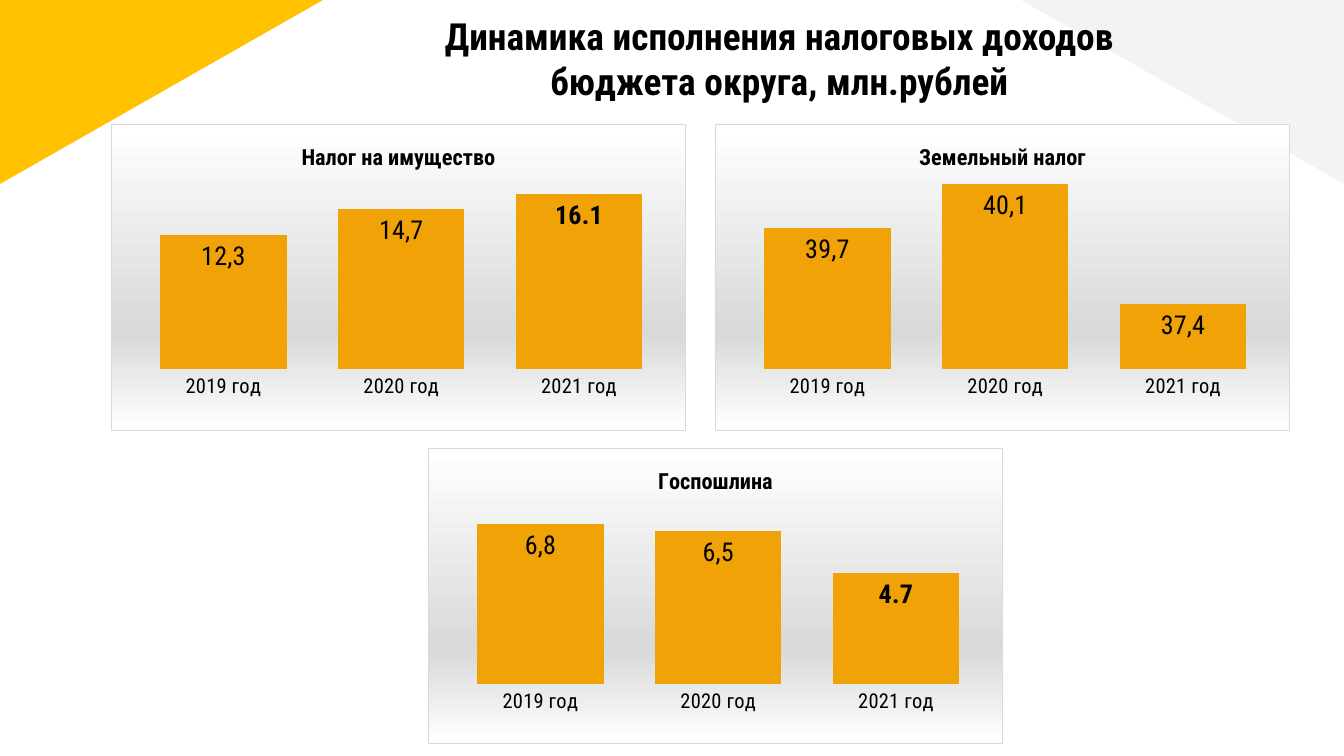
from pptx import Presentation
from pptx.chart.data import CategoryChartData as ChartData
from pptx.dml.color import RGBColor as Rgb
from pptx.enum.chart import XL_CHART_TYPE as Kind, XL_LABEL_POSITION as Spot
from pptx.enum.chart import XL_TICK_MARK as Tick
from pptx.enum.shapes import MSO_SHAPE as Form
from pptx.enum.text import MSO_ANCHOR as Anchor, MSO_AUTO_SIZE as Fit, PP_ALIGN as Align
from pptx.oxml import parse_xml
from pptx.oxml.ns import nsdecls, qn
from pptx.util import Pt

HEAD = "Динамика исполнения налоговых доходов\vбюджета округа, млн.рублей"
YEARS = ["2019 год", "2020 год", "2021 год"]
CHARTS = [
    {"name": "Налог на имущество", "vals": [12.3, 14.7, 16.1], "tags": ["12,3", "14,7"],
     "range": (0, 18), "box": (111, 124, 575, 307)},
    {"name": "Земельный налог", "vals": [39.7, 40.1, 39], "tags": ["39,7", "40,1", "37,4"],
     "range": (38.4, 40.2), "box": (715, 124, 575, 307)},
    {"name": "Госпошлина", "vals": [6.8, 6.5, 4.7], "tags": ["6,8", "6,5"],
     "range": (0, 8), "box": (428, 448, 575, 296)},
]
CORNERS = [("gold", 0, True), ("pale", 1021, False)]
PLOT = {"x": 0.04, "y": 0.16, "w": 0.93, "h": 0.64}
THEME = {
    "font": "Roboto Condensed", "ink": "000000", "bar": "F0A206",
    "gold": "FFC100", "pale": "F3F3F3", "edge": "D9D9D9",
    "fade": [(0, "FFFFFF"), (68, "D9D9D9"), (100, "FFFFFF")],
    "head": 20, "label": 14, "title": 12, "axis": 11,
}
SCALE = 914400 / 134.4


def px(*nums):
    return [round(n * SCALE) for n in nums]


def style(font, size, bold=False):
    font.name = THEME["font"]
    font.size = Pt(size)
    font.bold = bold
    font.color.rgb = Rgb.from_string(THEME["ink"])


def put(frame, text, size, bold=False, align=Align.CENTER):
    frame.text = text
    para = frame.paragraphs[0]
    para.alignment = align
    for run in para.runs:
        style(run.font, size, bold)


def corner(slide, tone, left, flip):
    shape = slide.shapes.add_shape(Form.RIGHT_TRIANGLE, *px(left, 0, 323, 184))
    shape.rotation = 180
    shape.shadow.inherit = False
    shape.fill.solid()
    shape.fill.fore_color.rgb = Rgb.from_string(THEME[tone])
    shape.line.fill.background()
    if flip:
        shape._element.spPr.xfrm.set("flipH", "1")


def panel(chart):
    stops = "".join(
        f'<a:gs pos="{pos * 1000}"><a:srgbClr val="{tone}"/></a:gs>'
        for pos, tone in THEME["fade"])
    back = parse_xml(
        f'<c:spPr {nsdecls("c", "a")}><a:gradFill><a:gsLst>{stops}</a:gsLst>'
        f'<a:lin ang="5400000" scaled="0"/></a:gradFill><a:ln w="{Pt(0.75)}">'
        f'<a:solidFill><a:srgbClr val="{THEME["edge"]}"/></a:solidFill></a:ln></c:spPr>')
    modes = "".join(f'<c:{side}Mode val="edge"/>' for side in "xy")
    sizes = "".join(f'<c:{key} val="{num}"/>' for key, num in PLOT.items())
    area = parse_xml(
        f'<c:layout {nsdecls("c")}><c:manualLayout><c:layoutTarget val="inner"/>'
        f'{modes}{sizes}</c:manualLayout></c:layout>')
    root = chart._chartSpace.find(qn("c:chart"))
    root.addnext(back)
    plot = root.find(qn("c:plotArea"))
    for old in plot.findall(qn("c:layout")):
        plot.remove(old)
    plot.insert(0, area)


def graph(slide, item):
    data = ChartData(number_format="0.0")
    data.categories = YEARS
    data.add_series(item["name"], item["vals"])
    chart = slide.shapes.add_chart(Kind.COLUMN_CLUSTERED, *px(*item["box"]), data).chart
    style(chart.font, THEME["title"])
    chart.has_legend = False
    chart.has_title = True
    put(chart.chart_title.text_frame, item["name"], THEME["title"], bold=True)
    chart.chart_title.include_in_layout = False

    cats, vals = chart.category_axis, chart.value_axis
    cats.major_tick_mark = Tick.NONE
    cats.format.line.fill.background()
    style(cats.tick_labels.font, THEME["axis"])
    vals.minimum_scale, vals.maximum_scale = item["range"]
    vals.has_major_gridlines = False
    vals.visible = False

    plot = chart.plots[0]
    plot.gap_width = 41
    plot.vary_by_categories = False
    bars = plot.series[0]
    bars.format.fill.solid()
    bars.format.fill.fore_color.rgb = Rgb.from_string(THEME["bar"])
    labels = bars.data_labels
    labels.show_value = True
    labels.position = Spot.INSIDE_END
    style(labels.font, THEME["label"], bold=True)
    for i, tag in enumerate(item["tags"]):
        label = bars.points[i].data_label
        put(label.text_frame, tag, THEME["label"])
        label.position = Spot.INSIDE_END
    panel(chart)


def main():
    deck = Presentation()
    deck.slide_width, deck.slide_height = px(1344, 756)
    slide = deck.slides.add_slide(deck.slide_layouts[5])
    for spot in CORNERS:
        corner(slide, *spot)
    for item in CHARTS:
        graph(slide, item)

    title = slide.shapes.title
    title.left, title.top, title.width, title.height = px(184, 0, 1191, 84)
    frame = title.text_frame
    frame.word_wrap = True
    frame.auto_size = Fit.NONE
    frame.vertical_anchor = Anchor.TOP
    frame.margin_left, frame.margin_top, frame.margin_right, frame.margin_bottom = px(13, 13, 13, 13)
    put(frame, HEAD, THEME["head"], bold=True)
    slide.shapes._spTree.append(title._element)
    deck.save("out.pptx")


if __name__ == "__main__":
    main()
